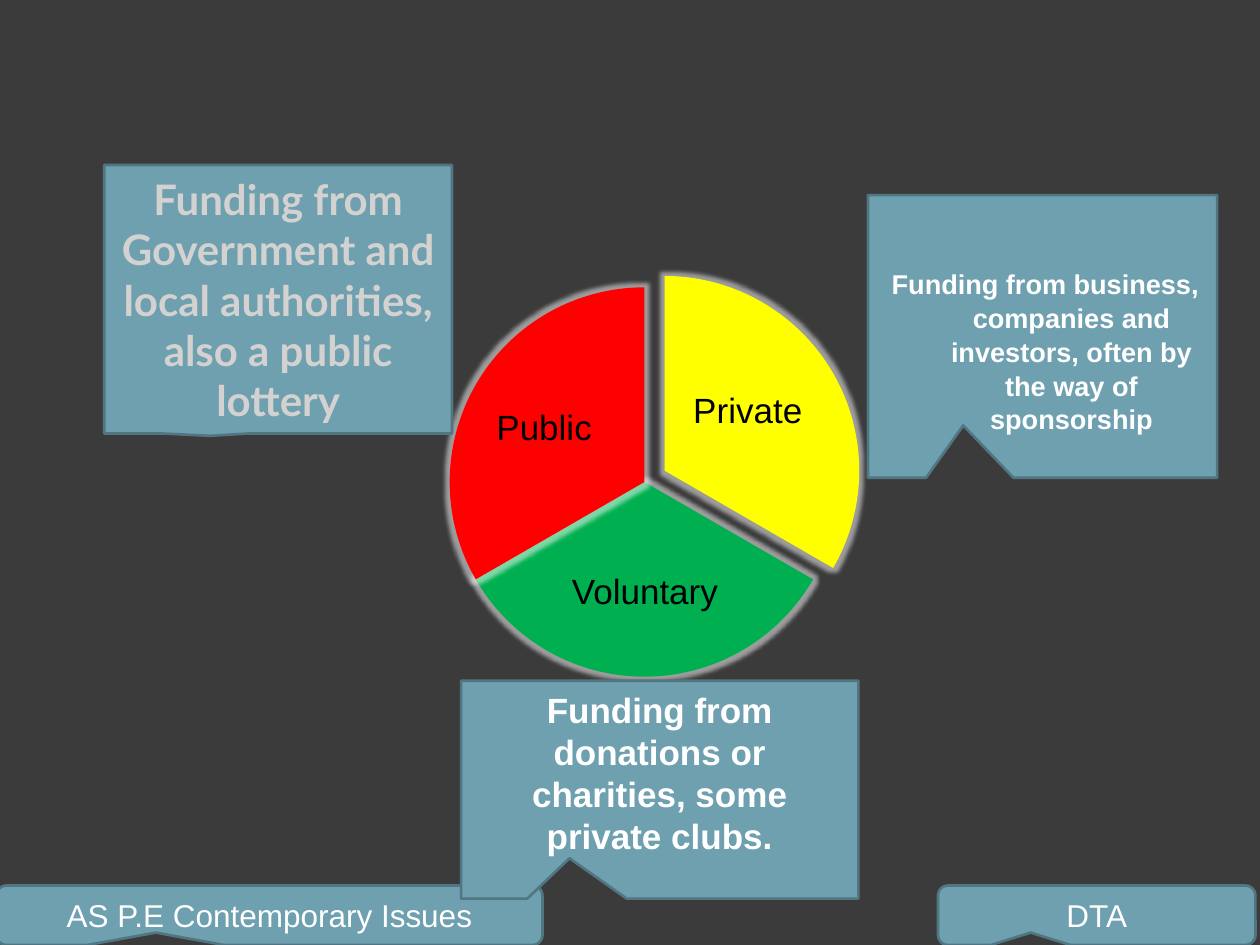
from lxml.etree import SubElement
from pptx import Presentation
from pptx.dml.color import RGBColor
from pptx.enum.shapes import MSO_SHAPE
from pptx.enum.text import MSO_ANCHOR, PP_ALIGN
from pptx.oxml.ns import qn
from pptx.util import Pt

WHITE = "FFFFFF"


def color(code):
    return RGBColor.from_string(code)


def paint(fill, code):
    fill.solid()
    fill.fore_color.rgb = color(code)


def write(shape, text, size, code, bold=False, font="Arial", pads=(7.2, 3.6, 7.2, 3.6)):
    frame = shape.text_frame
    frame.word_wrap = True
    frame.vertical_anchor = MSO_ANCHOR.MIDDLE
    (frame.margin_left, frame.margin_top,
     frame.margin_right, frame.margin_bottom) = map(Pt, pads)
    para = frame.paragraphs[0]
    para.alignment = PP_ALIGN.CENTER
    run = para.add_run()
    run.text = text
    run.font.size = Pt(size)
    run.font.name = font
    run.font.bold = bold
    run.font.color.rgb = color(code)
    return para


def add_form(slide, kind, box, adjust, code):
    shape = slide.shapes.add_shape(kind, *map(Pt, box))
    shape.shadow.inherit = False
    for i, value in enumerate(adjust):
        shape.adjustments[i] = value
    paint(shape.fill, code)
    return shape


def add_callout(slide, kind, box, adjust):
    shape = add_form(slide, kind, box, adjust, "6EA0B0")
    paint(shape.line.fill, "517682")
    shape.line.width = Pt(1.5)
    return shape


def add_slice(slide, left, top, start, end, code):
    shape = add_form(slide, MSO_SHAPE.PIE, (left, top, 222.5, 222.5),
                     (start * 0.6, end * 0.6), code)
    shape.line.fill.background()
    effects = shape._element.spPr.find(qn("a:effectLst"))
    glow = SubElement(effects, qn("a:glow"), rad=str(Pt(5)))
    tint = SubElement(glow, qn("a:srgbClr"), val=WHITE)
    SubElement(tint, qn("a:alpha"), val="50000")


def add_label(slide, text, box, right=2.2):
    label = slide.shapes.add_textbox(*map(Pt, box))
    para = write(label, text, 20, "000000", pads=(2.2, 2.2, right, 2.2))
    para.line_spacing = 0.9


def add_pie(slide):
    add_slice(slide, 268.5, 157.7, 270, 30, "FFFF00")
    add_label(slide, "Private", (389.5, 198.7, 75.6, 74.2))
    add_slice(slide, 257, 164.2, 30, 150, "00B050")
    add_label(slide, "Voluntary", (318.2, 304.6, 100.8, 69))
    add_slice(slide, 257, 164.2, 150, 270, "FF0000")
    add_label(slide, "Public", (280.8, 208, 75.6, 74.2), right=17.5)


def add_footer(slide):
    for text, left, width in (("AS P.E Contemporary Issues", -2, 312), ("DTA", 536, 181.4)):
        shape = add_callout(slide, MSO_SHAPE.ROUNDED_RECTANGULAR_CALLOUT,
                            (left, 506, width, 34), (-0.208, 0.292, 0.167))
        write(shape, text, 18, WHITE)


def add_notes(slide):
    kind = MSO_SHAPE.RECTANGULAR_CALLOUT
    private = add_callout(slide, kind, (496, 111.5, 199.5, 161.5), (-0.227, 0.315))
    para = write(private, "Funding from business, companies and investors, often by "
                 "the way of sponsorship", 15.5, WHITE, True, pads=(7.2, 20, 7.2, 3.6))
    para.line_spacing = 1.04
    props = para._p.get_or_add_pPr()
    props.set("marL", str(Pt(33)))
    props.set("indent", str(Pt(-30)))

    charity = add_callout(slide, kind, (263.5, 389, 227, 124.5), (-0.227, 0.315))
    write(charity, "Funding from donations or charities, some private clubs.",
          20, WHITE, True, pads=(7.2, 3.6, 7.2, 23))

    public = add_callout(slide, kind, (59.6, 94.3, 198.7, 153.4), (-0.197, 0.509))
    write(public, "Funding from Government and local authorities, also a public lottery",
          24, "D4D2D0", True, "Lato")


def main():
    deck = Presentation()
    deck.slide_width, deck.slide_height = Pt(720), Pt(540)
    slide = deck.slides.add_slide(deck.slide_layouts[6])
    paint(slide.background.fill, "3B3B3B")
    add_footer(slide)
    add_pie(slide)
    add_notes(slide)
    deck.save("out.pptx")


if __name__ == "__main__":
    main()
